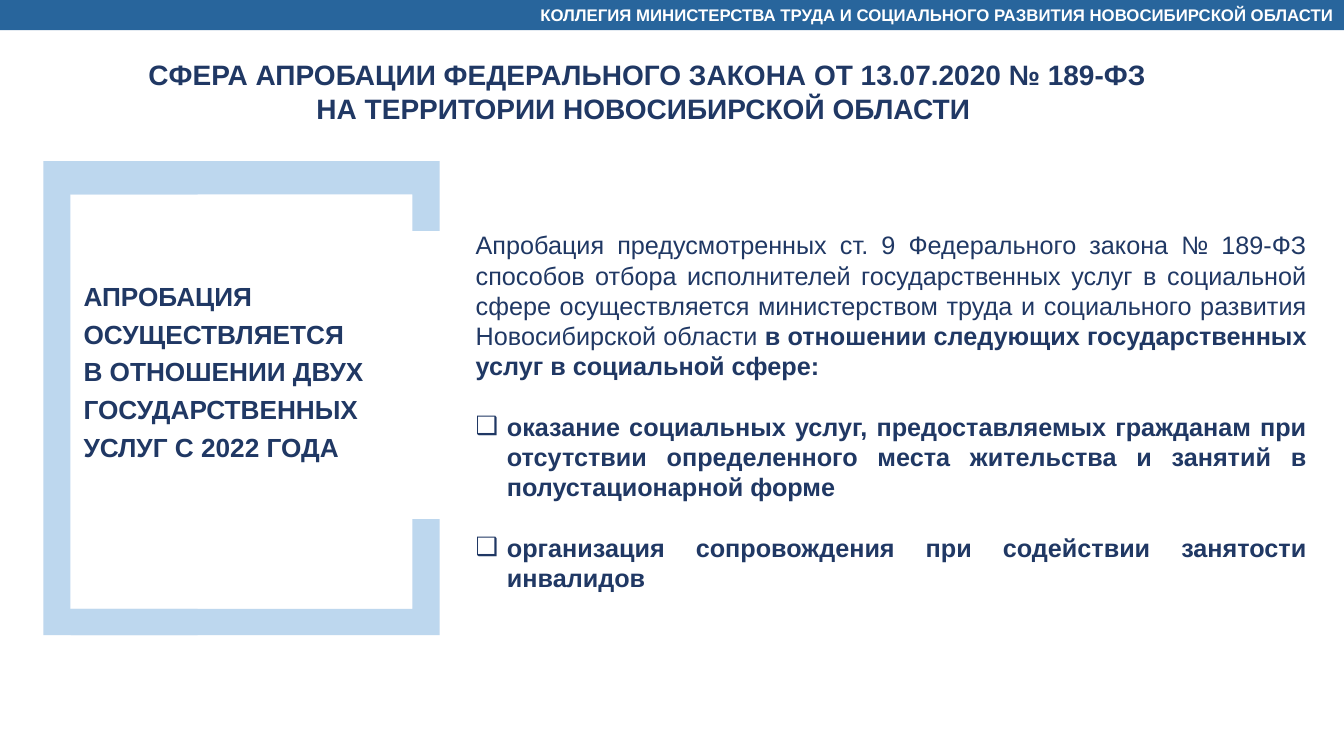
from lxml.etree import SubElement
from pptx import Presentation
from pptx.dml.color import RGBColor
from pptx.enum.shapes import MSO_SHAPE
from pptx.enum.text import MSO_ANCHOR, PP_ALIGN
from pptx.oxml.ns import qn
from pptx.util import Inches, Pt

NAVY = RGBColor(0x20, 0x38, 0x64)
BLUE = RGBColor(0x28, 0x65, 0x9C)
PALE_BLUE = RGBColor(0xBD, 0xD7, 0xEE)
WHITE = RGBColor(0xFF, 0xFF, 0xFF)

WIDTH, HEIGHT = 13.33, 7.5
BANNER_HEIGHT = HEIGHT * 0.04
BULLET_INDENT = 0.31
LINE_GAP = 21.6

BANNER = [[("КОЛЛЕГИЯ МИНИСТЕРСТВА ТРУДА И СОЦИАЛЬНОГО РАЗВИТИЯ НОВОСИБИРСКОЙ ОБЛАСТИ", True)]]
TITLE = [
    [("СФЕРА АПРОБАЦИИ ФЕДЕРАЛЬНОГО ЗАКОНА ОТ 13.07.2020 № 189-ФЗ", True)],
    [("НА ТЕРРИТОРИИ НОВОСИБИРСКОЙ ОБЛАСТИ ", True)],
]
SUMMARY = [
    [("АПРОБАЦИЯ ОСУЩЕСТВЛЯЕТСЯ", True)],
    [("В ОТНОШЕНИИ ДВУХ ГОСУДАРСТВЕННЫХ УСЛУГ С 2022 ГОДА", True)],
]
INTRODUCTION = [
    ("Апробация предусмотренных ст. 9 Федерального закона № 189-ФЗ способов отбора "
     "исполнителей государственных услуг в социальной сфере осуществляется министерством "
     "труда и социального развития Новосибирской области ", False),
    ("в отношении следующих государственных услуг в социальной сфере:", True),
]
SERVICES = [
    [("оказание социальных услуг, предоставляемых гражданам при отсутствии определенного "
      "места жительства и занятий в полустационарной форме", True)],
    [("организация сопровождения при содействии занятости инвалидов", True)],
]

LEFT, INNER_LEFT, SEAM, INNER_RIGHT, RIGHT = map(Inches, (0.43, 0.7, 1.96, 4.09, 4.36))
TOP, INNER_TOP, UPPER_END = map(Inches, (1.6, 1.93, 2.29))
LOWER_END, INNER_BOTTOM, BOTTOM = map(Inches, (5.15, 6.04, 6.3))
FRAME_PARTS = [
    [
        [(INNER_RIGHT, LOWER_END), (RIGHT, LOWER_END), (RIGHT, BOTTOM),
         (INNER_LEFT, BOTTOM), (INNER_LEFT, INNER_BOTTOM), (INNER_RIGHT, INNER_BOTTOM)],
        [(INNER_LEFT, TOP), (RIGHT, TOP), (RIGHT, UPPER_END),
         (INNER_RIGHT, UPPER_END), (INNER_RIGHT, INNER_TOP), (INNER_LEFT, INNER_TOP)],
    ],
    [
        [(LEFT, TOP), (SEAM, TOP), (SEAM, INNER_TOP), (INNER_LEFT, INNER_TOP),
         (INNER_LEFT, INNER_BOTTOM), (SEAM, INNER_BOTTOM), (SEAM, BOTTOM), (LEFT, BOTTOM)],
    ],
]


def paint(shape, color):
    shape.shadow.inherit = False
    shape.fill.solid()
    shape.fill.fore_color.rgb = color
    shape.line.fill.background()


def write(shape, paragraphs, size, color=NAVY, anchor=MSO_ANCHOR.TOP, **layout):
    frame = shape.text_frame
    frame.word_wrap = True
    frame.vertical_anchor = anchor
    for index, runs in enumerate(paragraphs):
        paragraph = frame.paragraphs[0] if index == 0 else frame.add_paragraph()
        for name, value in layout.items():
            setattr(paragraph, name, value)
        for text, bold in runs:
            run = paragraph.add_run()
            run.text = text
            run.font.color.rgb = color
            for name, value in {"name": "Arial", "size": Pt(size), "bold": bold}.items():
                setattr(run.font, name, value)
    return frame


def add_text(slide, box, paragraphs, size, **layout):
    shape = slide.shapes.add_textbox(*map(Inches, box))
    return write(shape, paragraphs, size, **layout)


def add_bullet(paragraph):
    properties = paragraph._p.get_or_add_pPr()
    properties.set("marL", str(Inches(BULLET_INDENT)))
    properties.set("indent", str(-Inches(BULLET_INDENT)))
    SubElement(properties, qn("a:buFont")).set("typeface", "Arial")
    SubElement(properties, qn("a:buChar")).set("char", "❑")


def add_frame_part(slide, contours):
    builder = slide.shapes.build_freeform(*contours[0][0])
    for start, *corners in contours:
        if start != contours[0][0]:
            builder.move_to(*start)
        builder.add_line_segments(corners, close=True)
    paint(builder.convert_to_shape(), PALE_BLUE)


def main():
    presentation = Presentation()
    presentation.slide_width, presentation.slide_height = Inches(WIDTH), Inches(HEIGHT)
    slide = presentation.slides.add_slide(presentation.slide_layouts[6])

    details = add_text(slide, (4.62, 2.23, 8.44, 3.74), [INTRODUCTION] + SERVICES, 18,
                       alignment=PP_ALIGN.JUSTIFY)
    for paragraph in details.paragraphs[1:]:
        paragraph.space_before = Pt(LINE_GAP)
        add_bullet(paragraph)

    add_text(slide, (0.19, 0.52, 12.46, 1.11), TITLE, 20, alignment=PP_ALIGN.CENTER)

    for contours in FRAME_PARTS:
        add_frame_part(slide, contours)
    add_text(slide, (0.73, 2.67, 3.31, 1.99), SUMMARY, 18.7, line_spacing=1.2)

    banner = slide.shapes.add_shape(MSO_SHAPE.RECTANGLE, 0, 0, Inches(WIDTH), Inches(BANNER_HEIGHT))
    paint(banner, BLUE)
    write(banner, BANNER, 12, WHITE, MSO_ANCHOR.MIDDLE, alignment=PP_ALIGN.RIGHT)

    presentation.save("out.pptx")


if __name__ == "__main__":
    main()
